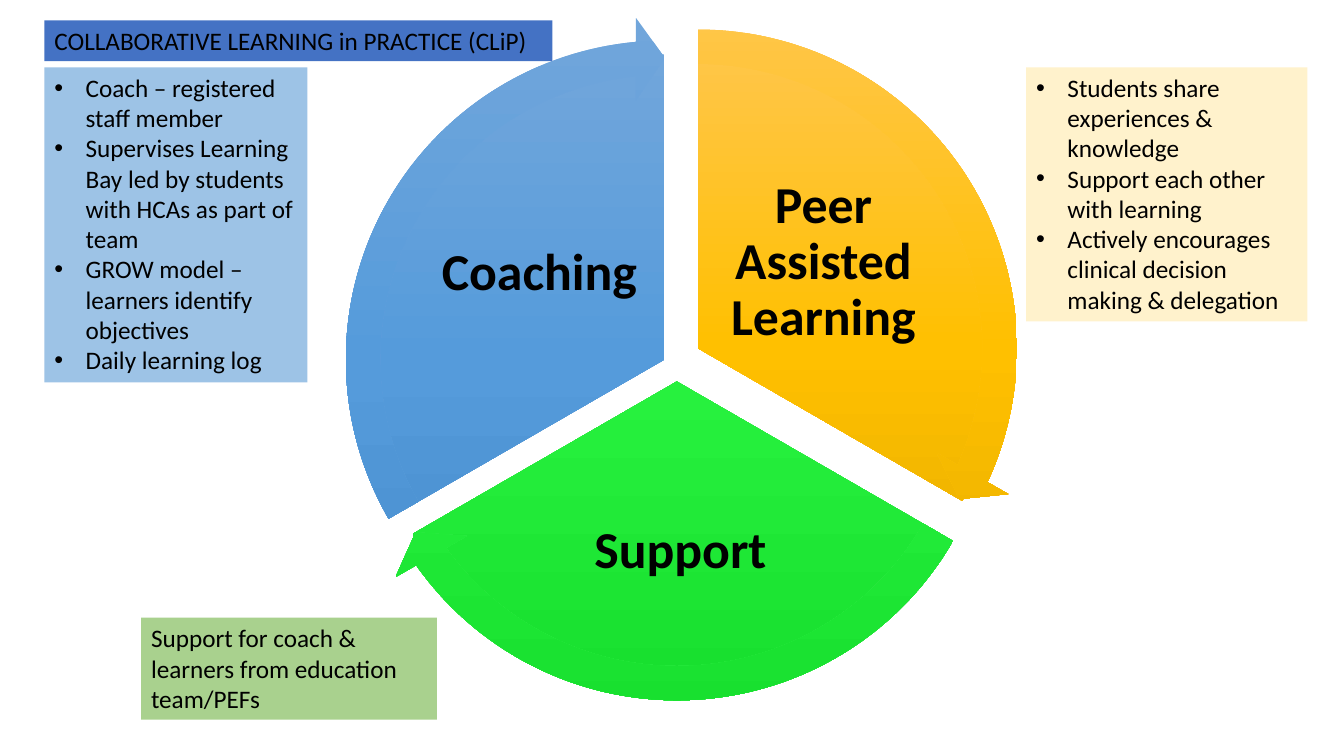
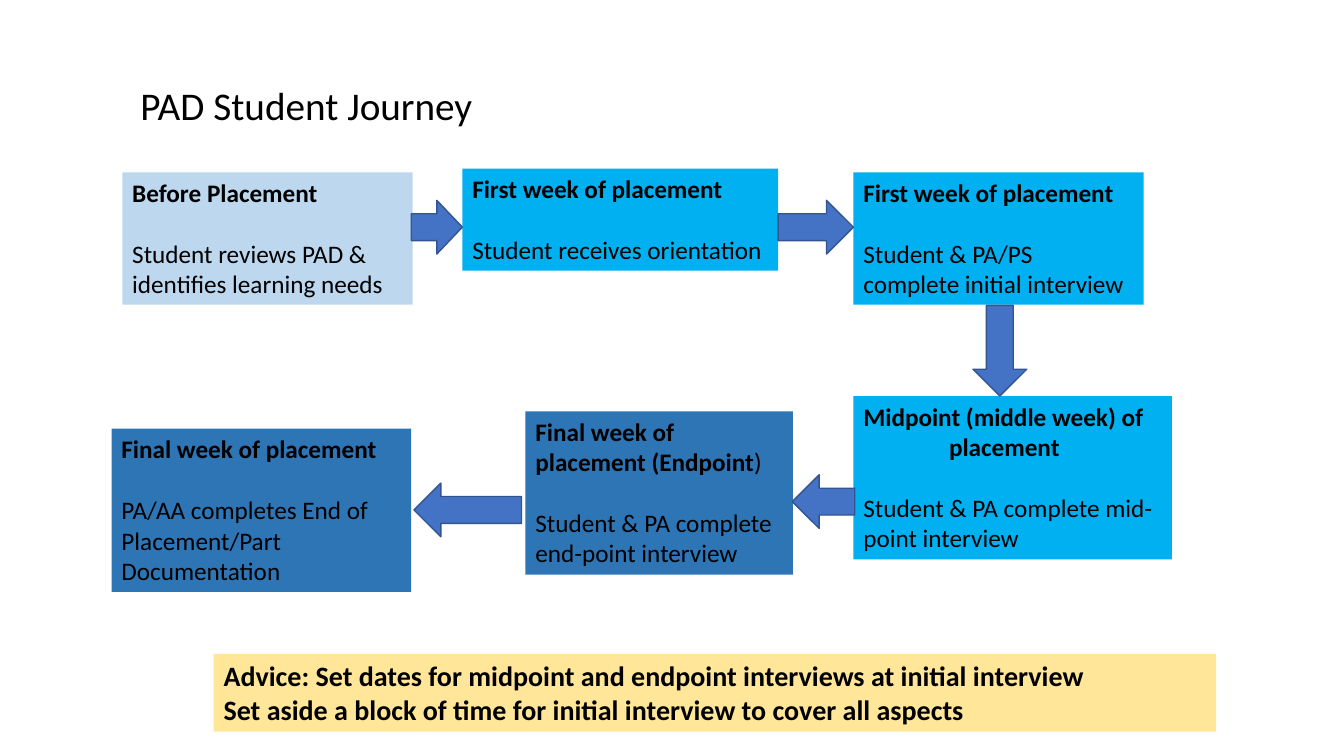
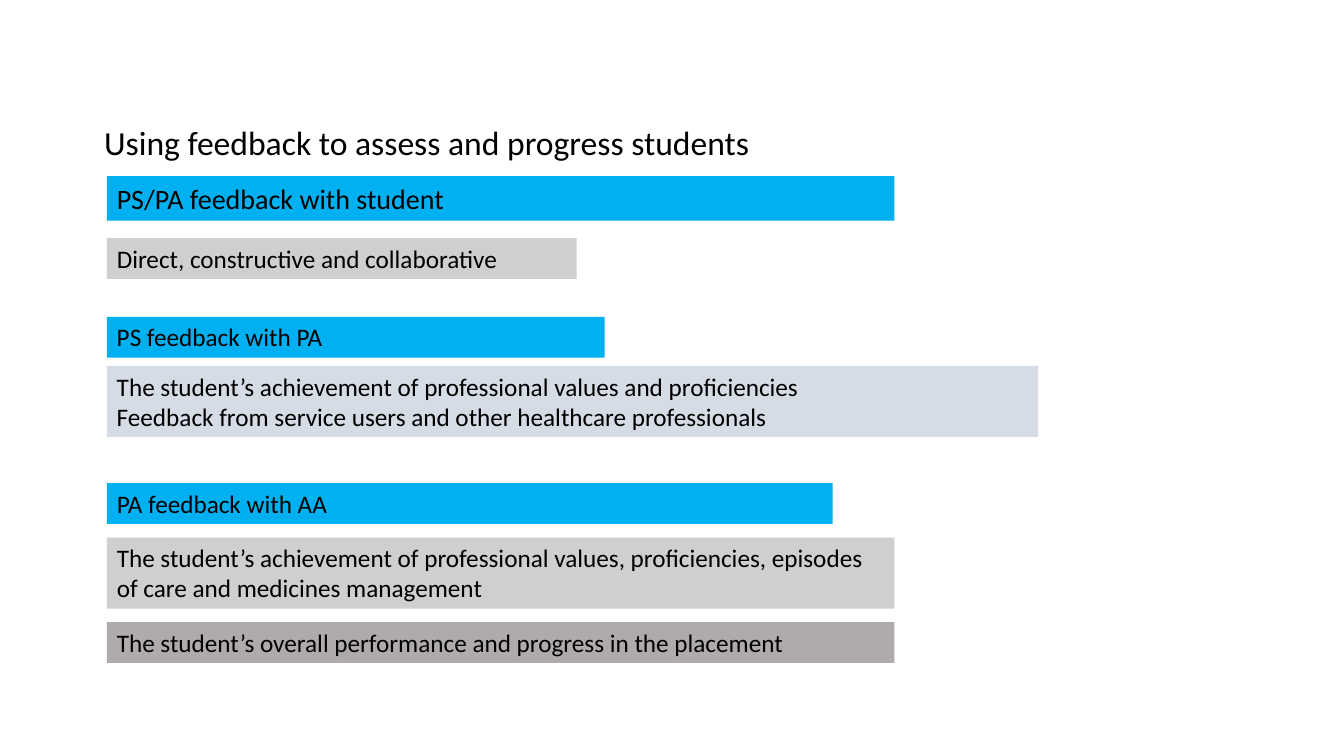
"""Build three slides on collaborative learning, the PAD journey and feedback."""
from copy import deepcopy

from pptx import Presentation
from pptx.dml.color import RGBColor
from pptx.enum.shapes import MSO_SHAPE
from pptx.enum.text import MSO_ANCHOR, MSO_AUTO_SIZE, PP_ALIGN
from pptx.util import Inches, Pt

RECT, PIE, RING = MSO_SHAPE.RECTANGLE, MSO_SHAPE.PIE, MSO_SHAPE.CIRCULAR_ARROW
RIGHT, DOWN = MSO_SHAPE.RIGHT_ARROW, MSO_SHAPE.DOWN_ARROW
TOP, MIDDLE = MSO_ANCHOR.TOP, MSO_ANCHOR.MIDDLE
LEFT, CENTER = PP_ALIGN.LEFT, PP_ALIGN.CENTER
FONT = "Calibri"
COLORS = {
    "text": "000000", "white": "FFFFFF", "banner": "4472C4", "outline": "325491",
    "coach": "9DC3E6", "peer": "FFF2CC", "support": "A9D18E", "advice": "FFE699",
    "before": "BDD7EE", "during": "00B0F0", "final": "2E75B6",
    "grey": "D0CECE", "mist": "D6DCE5", "stone": "AFABAB",
}
GRADIENTS = {
    "peer": ("FFC64B", "FFC000", "E3AB00"),
    "support": ("56EC62", "27F13E", "18E02F"),
    "coach": ("71A6DB", "559BDB", "448ACA"),
}

prs = Presentation()
prs.slide_width, prs.slide_height = Inches(13.33), Inches(7.5)
COL, ROW = prs.slide_width / 100, prs.slide_height / 100
TWO_LISTS, TITLE_ONLY = prs.slide_layouts[3], prs.slide_layouts[5]


def place(part, left, top, width, height, fill=None, outline=None):
    """Put a part on the grid of 100 columns and 100 rows and paint it."""
    part.left, part.top = round(left * COL), round(top * ROW)
    part.width, part.height = round(width * COL), round(height * ROW)
    part.shadow.inherit = False
    if fill:
        part.fill.solid()
        part.fill.fore_color.rgb = RGBColor.from_string(COLORS[fill])
    if outline:
        part.line.color.rgb = RGBColor.from_string(COLORS[outline])
        part.line.width = Pt(1)
    else:
        part.line.fill.background()
    return part


def write(part, text, size=18, bold=False, tail="", align=LEFT, anchor=TOP,
          inset=0.1, spacing=1, after=0, margin=0, hanging=0):
    """Add one paragraph, with an optional tail in regular weight."""
    frame = part.text_frame
    frame.word_wrap, frame.auto_size = True, MSO_AUTO_SIZE.NONE
    frame.vertical_anchor = anchor
    frame.margin_left = frame.margin_right = Inches(inset)
    frame.margin_top = frame.margin_bottom = Inches(0.05)
    paragraph = frame.add_paragraph() if frame.text else frame.paragraphs[0]
    paragraph.alignment, paragraph.line_spacing = align, spacing
    paragraph.space_before, paragraph.space_after = Pt(0), Pt(after)
    properties = paragraph._p.get_or_add_pPr()
    properties.set("marL", str(Inches(margin)))
    properties.set("indent", str(-Inches(hanging)))
    for words, weight in ((text, bold), (tail, False)):
        if words:
            run = paragraph.add_run()
            run.text = words
            run.font.name, run.font.size, run.font.bold = FONT, Pt(size), weight
            run.font.color.rgb = RGBColor.from_string(COLORS["text"])


model = prs.slides.add_slide(TWO_LISTS)
PIE_ROWS, RING_ROWS = 80.67, 90.67
THIRD, TURN, HEAD = 72, 216, 3.28
segments = [
    ("Peer Assisted Learning", "peer", 162, (51.94, 46.07), (53.17, 22.8, 16.2, 24)),
    ("Support", "support", 18, (50.36, 50.47), (38.48, 62.4, 24.3, 21.07)),
    ("Coaching", "coach", 90, (49.46, 47.53), (32.03, 24.27, 16.2, 24)),
]
for name, hue, start, (center_col, center_row), label_at in segments:
    end = (start + THIRD) % TURN
    for kind, rows, angles in (
        (PIE, PIE_ROWS, (start, end)),
        (RING, RING_ROWS, (0.05, HEAD, end - HEAD, start, 0.06)),
    ):
        columns = rows * ROW / COL
        segment = place(model.shapes.add_shape(kind, 0, 0, 0, 0),
                        center_col - columns / 2, center_row - rows / 2, columns, rows)
        for index, angle in enumerate(angles):
            segment.adjustments[index] = angle
        segment.fill.gradient()
        segment.fill.gradient_angle = 270
        stop_list = segment.element.xpath(".//a:gsLst")[0]
        stop_list.insert(1, deepcopy(stop_list[0]))
        for stop, position, shade in zip(segment.fill.gradient_stops, (0, 0.5, 1), GRADIENTS[hue]):
            stop.position = position
            stop.color.rgb = RGBColor.from_string(shade)
    label = place(model.shapes.add_textbox(0, 0, 0, 0), *label_at)
    write(label, name, size=37, bold=True, align=CENTER, anchor=MIDDLE, inset=0.05, spacing=0.9)

duties = [
    (1, (3.3, 8.9, 19.58, 41.7), "coach", [
        "Coach – registered staff member",
        "Supervises Learning Bay led by students with HCAs as part of team",
        "GROW model – learners identify objectives",
        "Daily learning log",
    ]),
    (2, (76.35, 8.9, 20.93, 33.6), "peer", [
        "Students share experiences & knowledge",
        "Support each other with learning",
        "Actively encourages clinical decision making & delegation",
    ]),
]
for index, at, fill, points in duties:
    duty_list = place(model.placeholders[index], *at, fill)
    for point in points:
        write(duty_list, point, margin=0.31, hanging=0.31)

support_note = place(model.shapes.add_shape(RECT, 0, 0, 0, 0), 10.5, 81.7, 22, 13.5, "support")
write(support_note, "Support for coach & learners from education team/PEFs")
banner = place(model.shapes.title, 3.3, 2.7, 37.8, 5.4, "banner")
write(banner, "COLLABORATIVE LEARNING in PRACTICE (CLiP)")
banner.element.getparent().append(banner.element)

journey = prs.slides.add_slide(TITLE_ONLY)
write(place(journey.shapes.title, 9.7, 10.1, 78.3, 13.9), "PAD Student Journey", size=28)
LINE_GAP = 22
steps = [
    ("Before Placement", "", "Student reviews PAD & identifies learning needs",
     (9.1, 22.8, 21.6, 17.5), "before"),
    ("First week of placement", "", "Student receives orientation",
     (34.4, 22.3, 23.5, 13.5), "during"),
    ("First week of placement", "", "Student & PA/PS complete initial interview",
     (63.5, 22.8, 21.6, 17.5), "during"),
    ("Midpoint (middle week) of", "placement", "Student & PA complete mid-point interview",
     (63.5, 52.4, 23.7, 21.6), "during"),
    ("Final week of placement (Endpoint)", "", "Student & PA complete end-point interview",
     (39.1, 54.4, 19.9, 21.6), "final"),
    ("Final week of placement", "", "PA/AA completes End of Placement/Part Documentation",
     (8.3, 56.7, 22.3, 21.6), "final"),
]
for heading, second_line, task, at, fill in steps:
    step = place(journey.shapes.add_shape(RECT, 0, 0, 0, 0), *at, fill)
    bold_part = heading.removesuffix(")")
    write(step, bold_part, bold=True, tail=heading[len(bold_part):],
          after=0 if second_line else LINE_GAP)
    if second_line:
        write(step, second_line, bold=True, margin=0.85, after=LINE_GAP)
    write(step, task)

links = [
    (RIGHT, 0, (30.6, 26.5, 3.8, 7.1)),
    (RIGHT, 0, (57.9, 26.5, 5.6, 7.1)),
    (DOWN, 0, (72.4, 40.4, 4, 12)),
    (RIGHT, 180, (58.95, 62.8, 4.65, 7.1)),
    (RIGHT, 180, (30.8, 63.9, 8, 7.1)),
]
for kind, turn, at in links:
    link = place(journey.shapes.add_shape(kind, 0, 0, 0, 0), *at, "banner", "outline")
    link.rotation = turn

advice = place(journey.shapes.add_shape(RECT, 0, 0, 0, 0), 15.9, 86.5, 74.6, 10.3, "advice")
for sentence in (
    "Advice: Set dates for midpoint and endpoint interviews at initial interview",
    "Set aside a block of time for initial interview to cover all aspects",
):
    write(advice, sentence, size=20, bold=True)

feedback = prs.slides.add_slide(TITLE_ONLY)
feedback_title = place(feedback.shapes.title, 7, 15.5, 82.35, 6.7, "white")
write(feedback_title, "Using feedback to assess and progress students", size=24)
bars = [
    (23.3, 58.6, 5.9, "during", 20, ["PS/PA feedback with student"]),
    (31.5, 34.95, 5.4, "grey", 18, ["Direct, constructive and collaborative"]),
    (41.9, 37.05, 5.4, "during", 18, ["PS feedback with PA"]),
    (48.4, 69.3, 9.4, "mist", 18, [
        "The student’s achievement of professional values and proficiencies",
        "Feedback from service users and other healthcare professionals",
    ]),
    (63.9, 54, 5.4, "during", 18, ["PA feedback with AA"]),
    (71.1, 58.6, 9.4, "grey", 18, [
        "The student’s achievement of professional values, proficiencies, episodes "
        "of care and medicines management",
    ]),
    (82.3, 58.6, 5.4, "stone", 18, [
        "The student’s overall performance and progress in the placement",
    ]),
]
for top, width, height, fill, size, sentences in bars:
    bar = place(feedback.shapes.add_shape(RECT, 0, 0, 0, 0), 7.95, top, width, height, fill)
    for sentence in sentences:
        write(bar, sentence, size=size)

prs.save("out.pptx")
